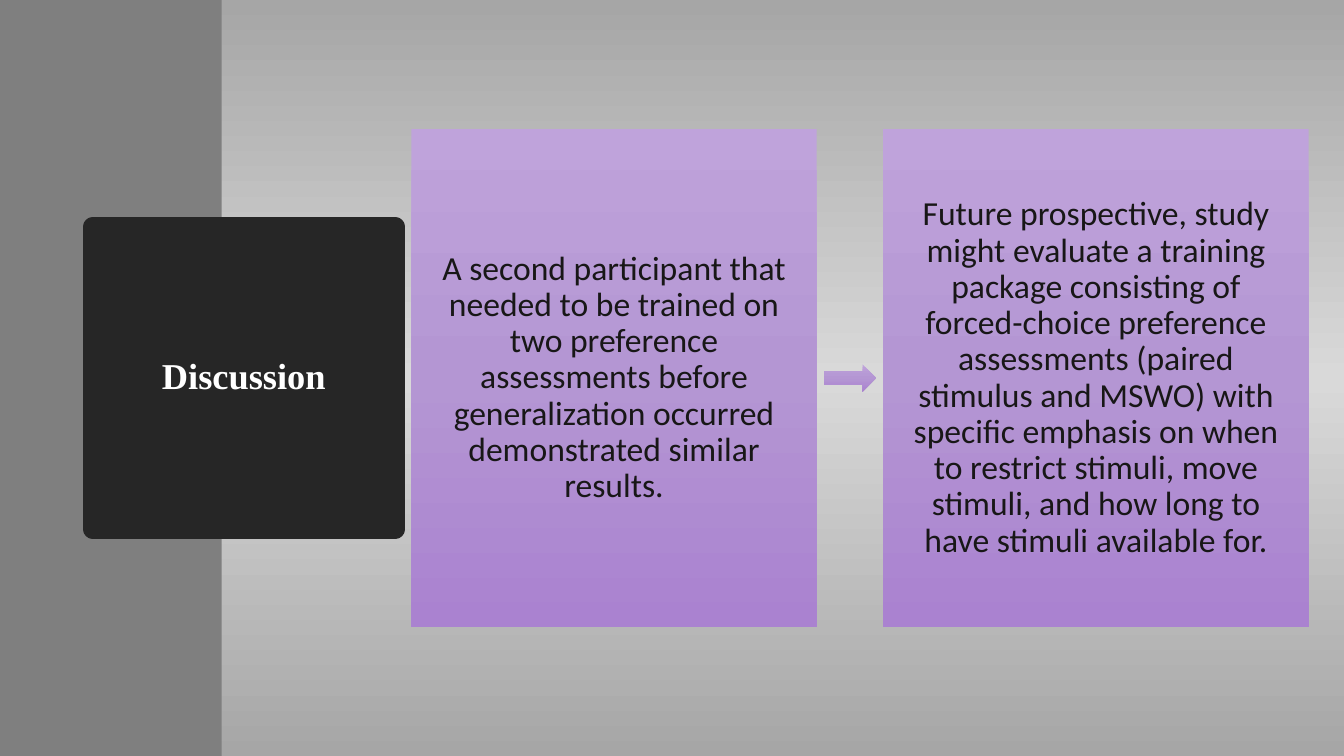
import copy

import pptx
import pptx.util
from pptx.dml.color import RGBColor
from pptx.enum.shapes import MSO_SHAPE
from pptx.enum.text import MSO_ANCHOR, MSO_AUTO_SIZE, PP_ALIGN

TITLE = "Discussion"
# left, width, text
CARDS = [
    (4.08, 4.02,
     "A second participant that needed to be trained on two preference "
     "assessments before generalization occurred demonstrated similar results."),
    (8.76, 4.22,
     "Future prospective, study might evaluate a training package consisting of "
     "forced-choice preference assessments (paired stimulus and MSWO) with "
     "specific emphasis on when to restrict stimuli, move stimuli, and how long "
     "to have stimuli available for."),
]

WIDE, HIGH = 13.33, 7.5
BAND = 2.2
SIDE = 3
CARD_HIGH = 4.95
ARROW = (0.52, 0.27)

WHITE = RGBColor(0xFF, 0xFF, 0xFF)
INK = RGBColor(0x18, 0x17, 0x17)
DARK = RGBColor(0x26, 0x26, 0x26)
GREY = RGBColor(0x7F, 0x7F, 0x7F)
EDGE = RGBColor(0xA6, 0xA6, 0xA6)
GLOW = RGBColor(0xD9, 0xD9, 0xD9)
PURPLES = [RGBColor(0xBF, 0xA3, 0xDB), RGBColor(0xB4, 0x96, 0xD3),
           RGBColor(0xAA, 0x82, 0xD0)]

Inches, Pt = pptx.util.Inches, pptx.util.Pt


def shade(fill, node, colors):
    """Give a fill an even three-stop gradient running from top to bottom."""
    fill.gradient()
    fill.gradient_angle = 270
    stops = node.xpath(".//a:gsLst")[0]
    stops.insert(1, copy.deepcopy(stops[0]))
    for i, (stop, color) in enumerate(zip(fill.gradient_stops, colors)):
        stop.position = i / 2
        stop.color.rgb = color


def add_block(slide, kind, left, width, height):
    """Add a plain shape centred on the height of the slide."""
    shape = slide.shapes.add_shape(
        kind, Inches(left), Inches((HIGH - height) / 2),
        Inches(width), Inches(height))
    shape.shadow.inherit = False
    shape.line.fill.background()
    return shape


def write(shape, text, font, size, color, bold=False):
    frame = shape.text_frame
    frame.text = text
    frame.word_wrap = True
    frame.auto_size = MSO_AUTO_SIZE.NONE
    frame.vertical_anchor = MSO_ANCHOR.MIDDLE
    par = frame.paragraphs[0]
    par.alignment = PP_ALIGN.CENTER
    par.line_spacing = 0.9
    par.font.name, par.font.size, par.font.bold = font, Pt(size), bold
    par.font.color.rgb = color
    return frame


def main():
    deck = pptx.Presentation()
    deck.slide_width, deck.slide_height = Inches(WIDE), Inches(HIGH)
    slide = deck.slides.add_slide(deck.slide_layouts[5])
    shade(slide.background.fill, slide.element, [EDGE, GLOW, EDGE])

    band = add_block(slide, MSO_SHAPE.RECTANGLE, 0, BAND, HIGH)
    band.fill.solid()
    band.fill.fore_color.rgb = GREY

    title = slide.shapes.title
    title.left, title.top = Inches(0.92), Inches((HIGH - SIDE) / 2)
    title.width = title.height = Inches(SIDE)
    title.fill.solid()
    title.fill.fore_color.rgb = title.line.color.rgb = DARK
    title.line.width = Pt(13.75)
    write(title, TITLE, "Times New Roman", 26, WHITE, True)
    band.element.addnext(title.element)

    for left, width, text in CARDS:
        card = add_block(slide, MSO_SHAPE.RECTANGLE, left, width, CARD_HIGH)
        shade(card.fill, card.element, PURPLES)
        frame = write(card, text, "Calibri", 24, INK)
        frame.margin_left = frame.margin_right = Inches(0.17)
        frame.margin_top = frame.margin_bottom = Inches(0.17)

    # The arrow sits midway in the gap between the cards
    start, end = CARDS[0][0] + CARDS[0][1], CARDS[1][0]
    wide, high = ARROW
    arrow = add_block(slide, MSO_SHAPE.RIGHT_ARROW,
                      (start + end - wide) / 2, wide, high)
    shade(arrow.fill, arrow.element, PURPLES)

    deck.save("out.pptx")


if __name__ == "__main__":
    main()
